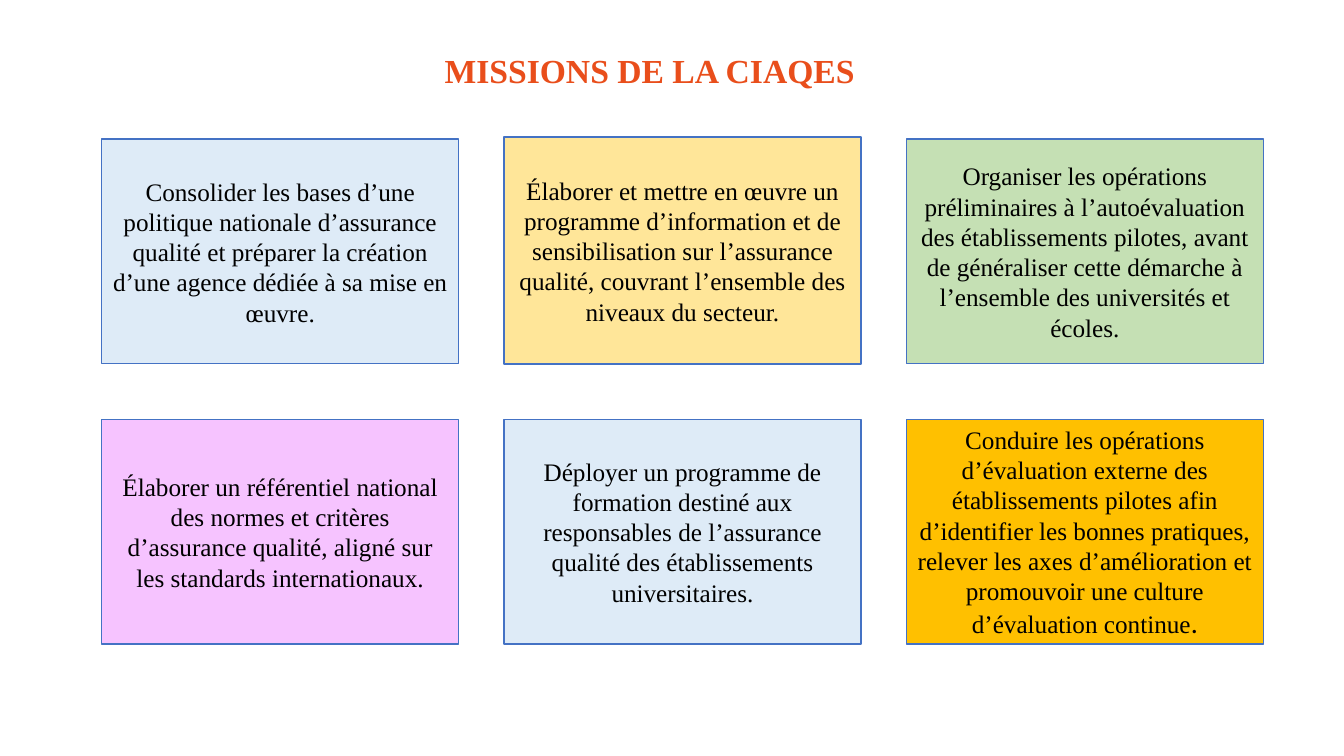
import pptx
import pptx.util
import pptx.dml.color
import pptx.enum.shapes
import pptx.enum.text

Inches, Pt = pptx.util.Inches, pptx.util.Pt
RGB = pptx.dml.color.RGBColor.from_string
ALIGN, ANCHOR = pptx.enum.text.PP_ALIGN, pptx.enum.text.MSO_ANCHOR

FONT = "Times New Roman"
COLORS = {
    "title_start": "E94E1B",
    "title_end": "F9B233",
    "border": "4472C4",
    "text": "000000",
    "blue": "DEEBF7",
    "yellow": "FFE699",
    "green": "C5E0B4",
    "pink": "F6C3FF",
    "gold": "FFC000",
}

# Row by row: fill, wording, extra height above the grid line
MISSIONS = [
    [
        ("blue", "Consolider les bases d’une politique nationale d’assurance qualité "
                 "et préparer la création d’une agence dédiée à sa mise en œuvre.", 0),
        ("yellow", "Élaborer et mettre en œuvre un programme d’information et de "
                   "sensibilisation sur l’assurance qualité, couvrant l’ensemble "
                   "des niveaux du secteur.", 0.02),
        ("green", "Organiser les opérations préliminaires à l’autoévaluation des "
                  "établissements pilotes, avant de généraliser cette démarche à "
                  "l’ensemble des universités et écoles.", 0),
    ],
    [
        ("pink", "Élaborer un référentiel national des normes et critères d’assurance "
                 "qualité, aligné sur les standards internationaux.", 0),
        ("blue", "Déployer un programme de formation destiné aux responsables de "
                 "l’assurance qualité des établissements universitaires.", 0),
        ("gold", "Conduire les opérations d’évaluation externe des établissements "
                 "pilotes afin d’identifier les bonnes pratiques, relever les axes "
                 "d’amélioration et promouvoir une culture d’évaluation continue", 0),
    ],
]


def format_run(run, font_name, size):
    run.font.name = font_name
    run.font.size = Pt(size)
    run.font.color.rgb = RGB(COLORS["text"])


def add_title(slide, left, top, width, height):
    title = slide.shapes.title
    title.left, title.top = Inches(left), Inches(top)
    title.width, title.height = Inches(width), Inches(height)
    frame = title.text_frame
    frame.text = "MISSIONS DE LA CIAQES"
    frame.word_wrap = True
    frame.auto_size = pptx.enum.text.MSO_AUTO_SIZE.NONE
    frame.vertical_anchor = ANCHOR.MIDDLE
    heading = frame.paragraphs[0]
    heading.alignment = ALIGN.LEFT
    heading.line_spacing = 0.9
    font = heading.runs[0].font
    font.name, font.size, font.bold = FONT, Pt(24), True
    font.fill.gradient()
    font.fill.gradient_angle = 340
    for stop, color in zip(font.fill.gradient_stops, ("title_start", "title_end")):
        stop.color.rgb = RGB(COLORS[color])


def add_mission(slide, left, top, width, height, fill, wording):
    card = slide.shapes.add_shape(
        pptx.enum.shapes.MSO_SHAPE.RECTANGLE,
        Inches(left), Inches(top), Inches(width), Inches(height))
    card.shadow.inherit = False
    card.fill.solid()
    card.fill.fore_color.rgb = RGB(COLORS[fill])
    card.line.color.rgb = RGB(COLORS["border"])
    card.line.width = Pt(1)
    frame = card.text_frame
    frame.text = wording
    frame.word_wrap = True
    frame.vertical_anchor = ANCHOR.MIDDLE
    mission = frame.paragraphs[0]
    mission.alignment = ALIGN.CENTER
    format_run(mission.runs[0], FONT, 18)
    return mission


def add_mission_grid(slide, left, top, width, height, gap_x, gap_y):
    """Fill the box with the missions, the columns and rows equally spaced."""
    row_count, column_count = len(MISSIONS), len(MISSIONS[0])
    card_width = (width - gap_x * (column_count - 1)) / column_count
    card_height = (height - gap_y * (row_count - 1)) / row_count
    for row, missions in enumerate(MISSIONS):
        for column, (fill, wording, rise) in enumerate(missions):
            mission = add_mission(
                slide,
                left + column * (card_width + gap_x),
                top + row * (card_height + gap_y) - rise,
                card_width, card_height + rise, fill, wording)
    # The last mission closes with a larger full stop in another font
    full_stop = mission.add_run()
    full_stop.text = "."
    format_run(full_stop, "Calibri", 20)


def main():
    deck = pptx.Presentation()
    deck.slide_width, deck.slide_height = Inches(13.33), Inches(7.5)
    slide = deck.slides.add_slide(deck.slide_layouts.get_by_name("Title Only"))
    add_title(slide, 4.31, -0.3, 4.35, 2.05)
    add_mission_grid(slide, 1.01, 1.38, 11.52, 5.01, 0.45, 0.55)
    deck.save("out.pptx")


if __name__ == "__main__":
    main()
